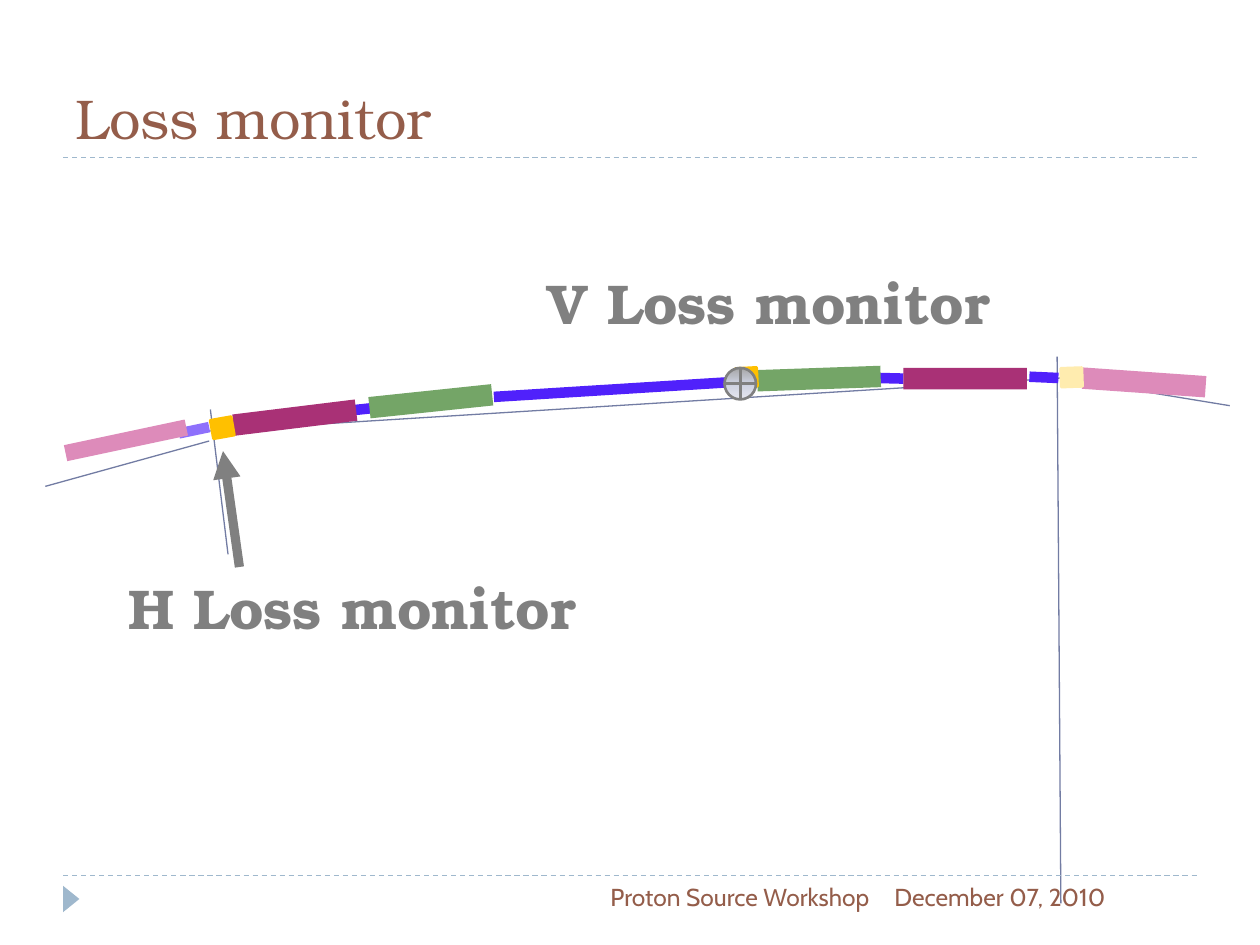
from lxml.etree import SubElement
from pptx import Presentation
from pptx.dml.color import RGBColor
from pptx.enum.dml import MSO_LINE_DASH_STYLE as DASH
from pptx.enum.shapes import MSO_CONNECTOR, MSO_SHAPE
from pptx.enum.text import MSO_ANCHOR, MSO_AUTO_SIZE, PP_ALIGN
from pptx.oxml.ns import qn
from pptx.util import Pt

SCALE = 9144
SERIF = "TeX Gyre Bonum"
SANS = "Cabin"

BROWN = RGBColor(0x94, 0x5D, 0x4A)
GREY = RGBColor(0x80, 0x80, 0x80)
PALE_BLUE = RGBColor(0x9F, 0xB8, 0xCD)
SLATE = RGBColor(0x72, 0x7C, 0xA3)
PIPE = RGBColor(0x50, 0x21, 0xFB)
PIPE_DARK = RGBColor(0x2E, 0x04, 0xC6)
PIPE_PALE = RGBColor(0x8E, 0x70, 0xFC)
GREEN = RGBColor(0x74, 0xA5, 0x67)
PLUM = RGBColor(0xA9, 0x31, 0x76)
PINK = RGBColor(0xDD, 0x8B, 0xBA)
AMBER = RGBColor(0xFF, 0xC0, 0x00)
CREAM = RGBColor(0xFF, 0xEC, 0xAF)
DIAL_STOPS = (
    (0, RGBColor(0xA6, 0xA6, 0xA6)),
    (50, RGBColor(0xCC, 0xD0, 0xE0)),
    (100, RGBColor(0xE6, 0xE7, 0xEF)),
)


def px(*lengths):
    return [round(length * SCALE) for length in lengths]


def write(frame, text, *, font, size, color, bold=False, align=PP_ALIGN.LEFT,
          anchor=MSO_ANCHOR.TOP, wrap=True):
    frame.word_wrap = wrap
    frame.vertical_anchor = anchor
    frame.auto_size = MSO_AUTO_SIZE.NONE if wrap else MSO_AUTO_SIZE.SHAPE_TO_FIT_TEXT
    paragraph = frame.paragraphs[0]
    paragraph.alignment = align
    run = paragraph.add_run()
    run.text = text
    run.font.name = font
    run.font.size = Pt(size)
    run.font.bold = bold
    run.font.color.rgb = color


def add_text(slide, box, text, **style):
    write(slide.shapes.add_textbox(*px(*box)).text_frame, text, **style)


def add_line(slide, start, end, color, width, dash=None):
    line = slide.shapes.add_connector(MSO_CONNECTOR.STRAIGHT, *px(*start, *end))
    line.line.color.rgb = color
    line.line.width = Pt(width)
    if dash:
        line.line.dash_style = dash
    SubElement(line._element.spPr, qn("a:effectLst"))
    return line


def add_block(slide, kind, box, color, angle=0, outline=None):
    block = slide.shapes.add_shape(kind, *px(*box))
    block.shadow.inherit = False
    block.rotation = angle
    block.fill.solid()
    block.fill.fore_color.rgb = color
    if outline:
        block.line.color.rgb = outline
        block.line.width = Pt(1.5)
    else:
        block.line.fill.background()
    return block


def header(slide, left, top, width, height):
    title = slide.shapes.title
    title.left, title.top, title.width, title.height = px(left, top, width, height)
    write(title.text_frame, "Loss monitor", font=SERIF, size=32, color=BROWN,
          anchor=MSO_ANCHOR.BOTTOM)
    bottom = top + height
    add_line(slide, (left, bottom), (left + width, bottom), PALE_BLUE, 0.75, DASH.DASH)


def footer(slide, left, top, width, height):
    add_line(slide, (left, top), (left + width, top), PALE_BLUE, 0.75, DASH.DASH)
    add_block(slide, MSO_SHAPE.ISOSCELES_TRIANGLE, (left - 4, top + 12, 21, 13),
              PALE_BLUE, 90)
    style = dict(font=SANS, size=14, color=BROWN)
    add_text(slide, (left + 267, top, 383, height), "Proton Source Workshop",
             align=PP_ALIGN.RIGHT, **style)
    add_text(slide, (left + 650, top, width - 650, height), "December 07, 2010", **style)


def beamline(slide, left, top):
    def at(x, y):
        return left + x, top + y

    axes = [
        (131, 42, 145, 157), (803, 0, 806, 434), (131, 59, 806, 17),
        (0, 103, 130, 67), (806, 17, 940, 39),
    ]
    pipes = [
        (134, 59, 156, 55, PIPE_DARK), (781, 16, 804, 17, PIPE),
        (240, 43, 259, 41, PIPE), (356, 32, 565, 19, PIPE),
        (806, 17, 829, 18, PIPE_PALE), (106, 61, 130, 56, PIPE_PALE),
    ]
    magnets = [
        (257, 27, 17, -6, GREEN), (565, 9, 17, -2, GREEN), (823, 12, 17, 4, PINK),
        (15, 60, 13, -12, PINK), (149, 40, 17, -7, PLUM),
    ]
    detectors = [(132, 49, -10, AMBER), (548, 9, -3, AMBER), (806, 9, -2, CREAM)]

    for x1, y1, x2, y2 in axes:
        add_line(slide, at(x1, y1), at(x2, y2), SLATE, 0.75)
    for x1, y1, x2, y2, color in pipes:
        add_line(slide, at(x1, y1), at(x2, y2), color, 6)
    level_pipe = add_line(slide, at(662, 17), at(681, 17), PIPE, 6)
    level_magnet = add_block(slide, MSO_SHAPE.RECTANGLE, (*at(681, 9), 98, 17), PLUM)
    level_pipe.end_connect(level_magnet, 1)
    for x, y, height, angle, color in magnets:
        add_block(slide, MSO_SHAPE.RECTANGLE, (*at(x, y), 98, height), color, angle)
    for x, y, angle, color in detectors:
        add_block(slide, MSO_SHAPE.RECTANGLE, (*at(x, y), 17, 15), color, angle, color)


def horizontal_monitor(slide, left, top):
    arrow = add_line(slide, (left + 85, top), (left + 98, top + 92), GREY, 5.25)
    SubElement(arrow.line._get_or_add_ln(), qn("a:headEnd"), type="triangle")
    add_text(slide, (left, top + 92, 379, 64), "H Loss monitor", font=SERIF, size=32,
             color=GREY, bold=True, wrap=False)


def vertical_monitor(slide, left, top):
    dial = add_block(slide, MSO_SHAPE.FLOWCHART_OR, (left + 150, top + 84, 25, 25),
                     GREY, outline=GREY)
    dial.fill.gradient()
    gradient = dial._element.spPr.find(qn("a:gradFill"))
    stops = gradient.find(qn("a:gsLst"))
    for stop in list(stops):
        stops.remove(stop)
    for percent, color in DIAL_STOPS:
        stop = SubElement(stops, qn("a:gs"), pos=str(percent * 1000))
        SubElement(stop, qn("a:srgbClr"), val=str(color))
    gradient.find(qn("a:lin")).set("ang", "5400000")
    add_text(slide, (left, top, 375, 64), "V Loss monitor", font=SERIF, size=32,
             color=GREY, bold=True, wrap=False)


def main():
    deck = Presentation()
    deck.slide_width, deck.slide_height = px(1000, 750)
    slide = deck.slides.add_slide(deck.slide_layouts[5])
    header(slide, 50, 17, 900, 108)
    beamline(slide, 36, 283)
    horizontal_monitor(slide, 92, 358)
    vertical_monitor(slide, 425, 208)
    footer(slide, 50, 695, 900, 40)
    deck.save("out.pptx")


if __name__ == "__main__":
    main()
